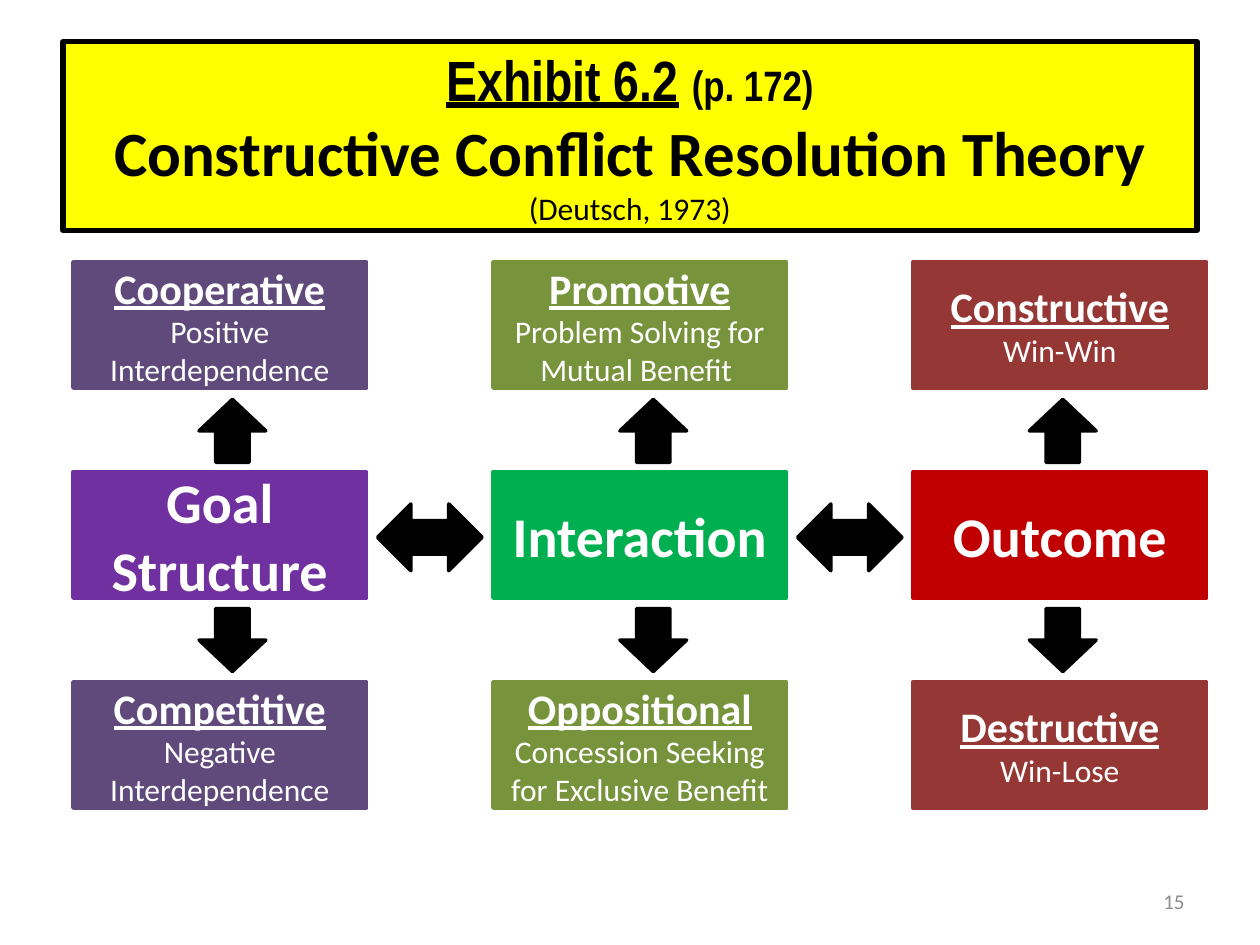
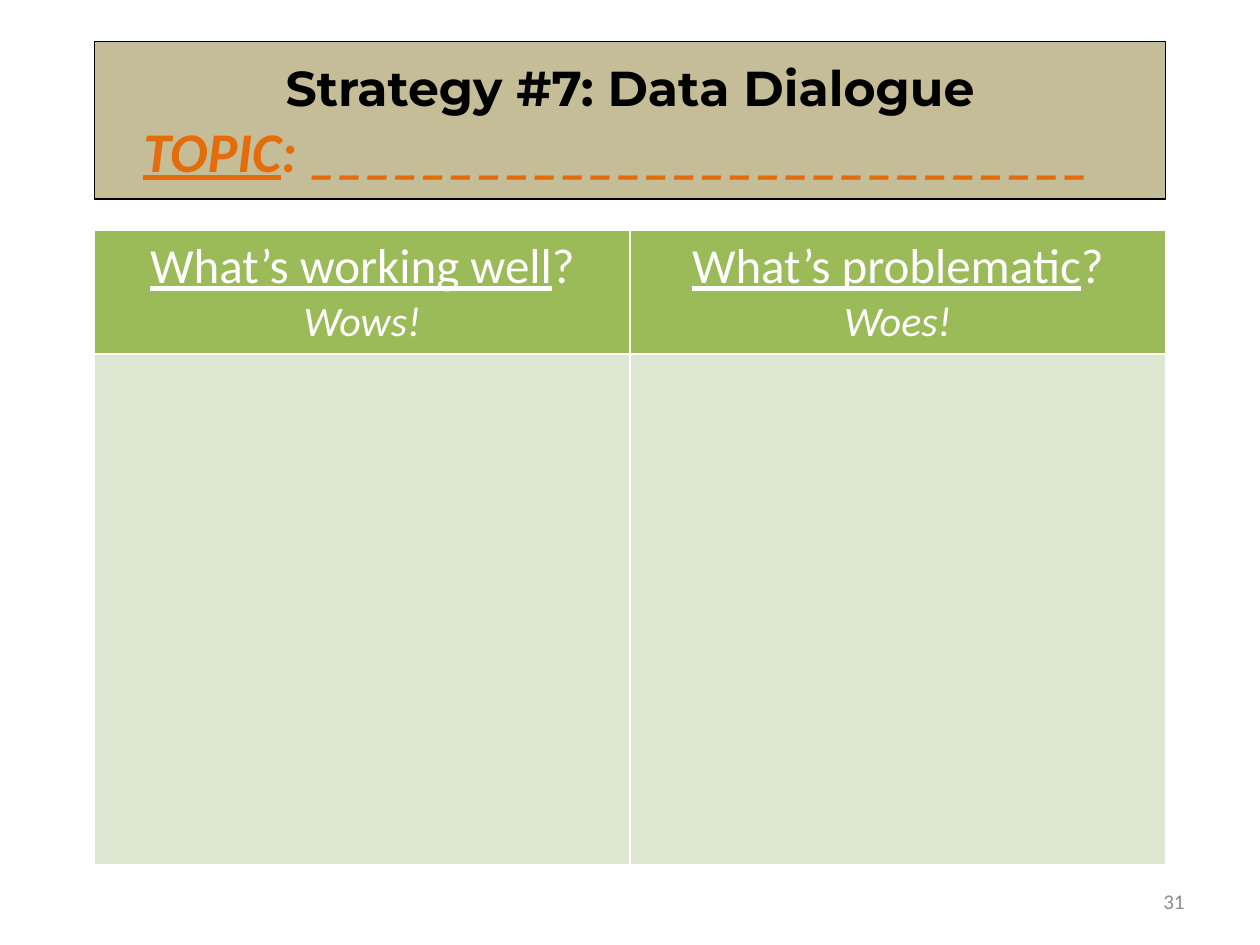
import pptx
import pptx.dml.color
import pptx.enum.shapes
import pptx.enum.text
import pptx.oxml
import pptx.oxml.ns
import pptx.util

Inches = pptx.util.Inches
Pt = pptx.util.Pt
RGB = pptx.dml.color.RGBColor.from_string
ALIGN = pptx.enum.text.PP_ALIGN
MIDDLE = pptx.enum.text.MSO_ANCHOR.MIDDLE
SHAPE = pptx.enum.shapes.MSO_SHAPE


class Theme:
    body_font, narrow_font, strategy_font = "Calibri", "Arial Narrow", "Montserrat"
    black, white, page_grey = "000000", "FFFFFF", "8C8C8C"
    yellow, tan, orange = "FFFF00", "C4BD97", "E46C0A"
    header_green, cell_green = "9BBB59", "DEE7D1"
    page, detail, heading, question, stage = 12, 18, 24, 28, 32
    exhibit, exhibit_page, theory = 32.4, 24.3, 36


def write(frame, lines, color, align=ALIGN.CENTER):
    """Fill a frame; each line lists runs of (text, size, style letters b/i/u[, font])."""
    frame.word_wrap = True
    for index, runs in enumerate(lines):
        paragraph = frame.add_paragraph() if index else frame.paragraphs[0]
        paragraph.alignment = align
        for text, size, style, *font in runs:
            run = paragraph.add_run()
            run.text = text
            run.font.name = font[0] if font else Theme.body_font
            run.font.size = Pt(size)
            run.font.bold = "b" in style
            run.font.italic = "i" in style
            run.font.underline = "u" in style
            run.font.color.rgb = RGB(color)


def add_block(slide, kind, left, top, width, height, fill, line=None, weight=2):
    block = slide.shapes.add_shape(
        kind, Inches(left), Inches(top), Inches(width), Inches(height))
    block.shadow.inherit = False
    block.fill.solid()
    block.fill.fore_color.rgb = RGB(fill)
    block.line.color.rgb = RGB(line or fill)
    block.line.width = Pt(weight)
    block.text_frame.vertical_anchor = MIDDLE
    return block


deck = pptx.Presentation()
deck.slide_width, deck.slide_height = Inches(10), Inches(7.5)

for page_number in ("15", "31"):
    slide = deck.slides.add_slide(deck.slide_layouts[6])
    footer = slide.shapes.add_textbox(
        Inches(7.17), Inches(6.95), Inches(2.33), Inches(0.4)).text_frame
    footer.vertical_anchor = MIDDLE
    write(footer, [[(page_number, Theme.page, "")]], Theme.page_grey, ALIGN.RIGHT)
theory_slide, dialogue_slide = deck.slides

# Slide 1: constructive conflict resolution theory
banner = add_block(theory_slide, SHAPE.RECTANGLE, 0.5, 0.33, 9, 1.5,
                   Theme.yellow, Theme.black, 3)
write(banner.text_frame, [
    [("Exhibit 6.2", Theme.exhibit, "bu", Theme.narrow_font),
     (" ", Theme.exhibit, "b", Theme.narrow_font),
     ("(p. 172)", Theme.exhibit_page, "b", Theme.narrow_font)],
    [("Constructive Conflict Resolution Theory", Theme.theory, "b")],
    [("(Deutsch, 1973)", Theme.detail, "")],
], Theme.black)

box_width, box_height = 2.33, 1
first_left, column_pitch = 0.58, 10 / 3
top_row, row_pitch = 2.08, 5 / 3
arrow_breadth, link_length = 0.53, 0.83

# Stage, its colour, its branch colour, arrow position, upper and lower branch
stages = [
    ("Goal Structure", "7030A0", "604A7B", 1.58,
     ("Cooperative", "Positive Interdependence"),
     ("Competitive", "Negative Interdependence")),
    ("Interaction", "00B050", "77933C", 4.92,
     ("Promotive", "Problem Solving for Mutual Benefit "),
     ("Oppositional", "Concession Seeking for Exclusive Benefit")),
    ("Outcome", "C00000", "953735", 8.17,
     ("Constructive", "Win-Win"),
     ("Destructive", "Win-Lose")),
]
for column, (stage, stage_color, branch_color, arrow_left, upper, lower) in enumerate(stages):
    left = first_left + column * column_pitch
    upper_lines, lower_lines = [
        [[(name, Theme.heading, "bu")], [(detail, Theme.detail, "")]]
        for name, detail in (upper, lower)]
    rows = [(upper_lines, branch_color),
            ([[(stage, Theme.stage, "b")]], stage_color),
            (lower_lines, branch_color)]
    for row, (lines, color) in enumerate(rows):
        box = add_block(theory_slide, SHAPE.RECTANGLE, left, top_row + row * row_pitch,
                        box_width, box_height, color)
        write(box.text_frame, lines, Theme.white)
    for direction, arrow_top in ((SHAPE.UP_ARROW, 3.17), (SHAPE.DOWN_ARROW, 4.83)):
        add_block(theory_slide, direction, arrow_left, arrow_top,
                  arrow_breadth, 0.5, Theme.black)
    if column < len(stages) - 1:
        gap = column_pitch - box_width
        add_block(theory_slide, SHAPE.LEFT_RIGHT_ARROW,
                  left + box_width + (gap - link_length) / 2, 4,
                  link_length, arrow_breadth, Theme.black)

# Slide 2: data dialogue
strategy = add_block(dialogue_slide, SHAPE.RECTANGLE, 0.75, 0.33, 8.5, 1.25,
                     Theme.tan, Theme.black, 0.75).text_frame
write(strategy, [[("Strategy #7: Data Dialogue", Theme.question, "b", Theme.strategy_font)],
                 [("TOPIC", Theme.stage, "biu"),
                  (": ____________________________", Theme.stage, "bi")]], Theme.black)
topic = strategy.paragraphs[1]
topic.alignment = ALIGN.LEFT
topic._p.get_or_add_pPr().set("marL", str(Inches(0.29)))
for run in topic.runs:
    run.font.color.rgb = RGB(Theme.orange)

dialogue = dialogue_slide.shapes.add_table(
    2, 2, Inches(0.75), Inches(1.83), Inches(8.5), Inches(5.03)).table
for row, height in zip(dialogue.rows, (0.98, 4.05)):
    row.height = Inches(height)

for cell in dialogue.iter_cells():
    for side in ("lnL", "lnR", "lnT", "lnB"):
        cell._tc.get_or_add_tcPr().append(pptx.oxml.parse_xml(
            f'<a:{side} {pptx.oxml.ns.nsdecls("a")} w="{Pt(1)}"><a:solidFill>'
            f'<a:srgbClr val="{Theme.white}"/></a:solidFill></a:{side}>'))
    cell.fill.solid()
    cell.fill.fore_color.rgb = RGB(Theme.cell_green)

questions = [("What’s working well", "Wows!"), ("What’s problematic", "Woes!")]
for column, (question, mood) in enumerate(questions):
    header = dialogue.cell(0, column)
    header.fill.fore_color.rgb = RGB(Theme.header_green)
    write(header.text_frame, [
        [(question, Theme.question, "u"), ("?", Theme.question, "")],
        [(mood, Theme.heading, "i")],
    ], Theme.white)

deck.save("out.pptx")
